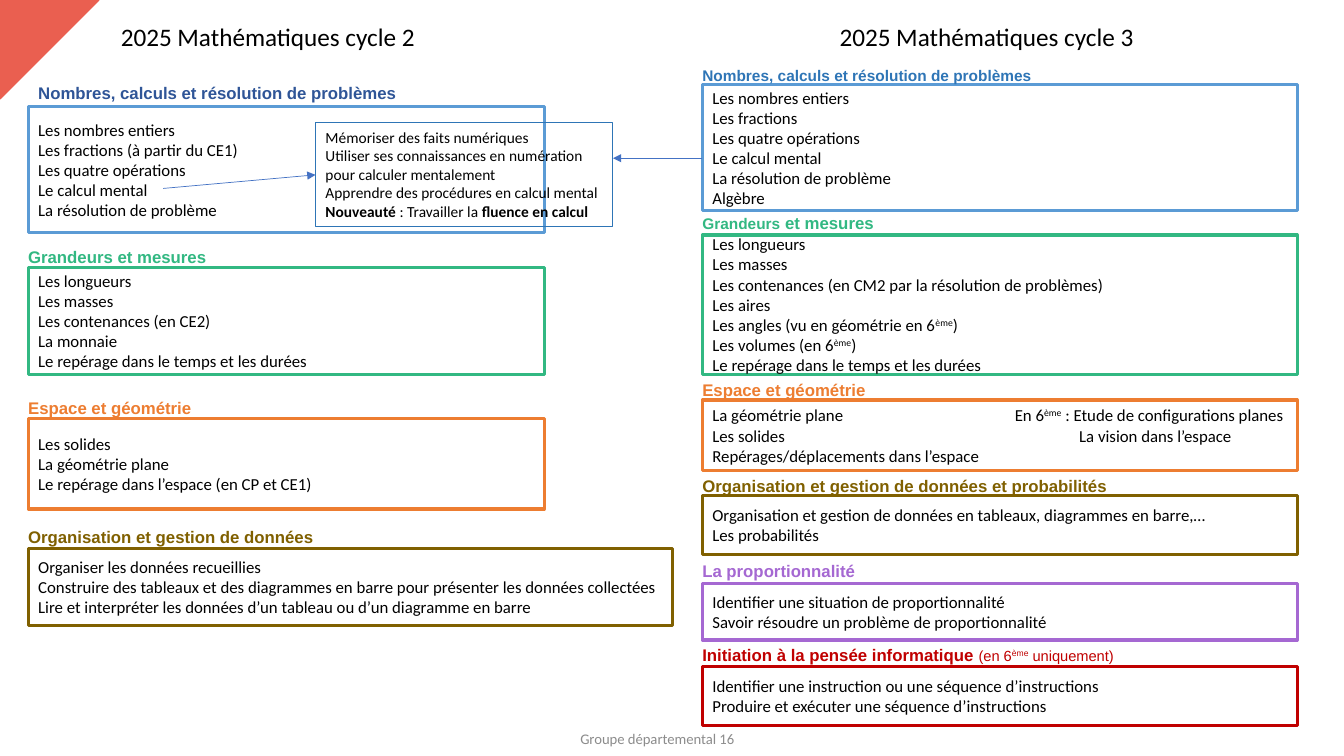
from dataclasses import dataclass

from lxml import etree
from pptx import Presentation
from pptx.dml.color import RGBColor
from pptx.enum.shapes import MSO_CONNECTOR, MSO_SHAPE
from pptx.enum.text import MSO_ANCHOR, MSO_AUTO_SIZE, PP_ALIGN
from pptx.oxml.ns import qn
from pptx.util import Pt

RECTANGLE = MSO_SHAPE.RECTANGLE
RIGHT_TRIANGLE = MSO_SHAPE.RIGHT_TRIANGLE
STRAIGHT = MSO_CONNECTOR.STRAIGHT
TOP, MIDDLE = MSO_ANCHOR.TOP, MSO_ANCHOR.MIDDLE
LEFT, CENTER = PP_ALIGN.LEFT, PP_ALIGN.CENTER
GROW, FIXED = MSO_AUTO_SIZE.SHAPE_TO_FIT_TEXT, MSO_AUTO_SIZE.NONE
LEFT_SIDE = 1

BLUE, GREEN, ORANGE = "5B9BD5", "32B882", "ED7D31"
BROWN, PURPLE, RED = "806000", "A568D2", "C00000"
DARK_BLUE, MID_BLUE, ARROW_BLUE = "2F5597", "2E75B6", "4472C4"
CORAL, GREY, BLACK = "EA5F50", "8C8C8C", "000000"

BOLD = {"bold": True}
ORDINAL = ("ème", {"raised": True})
SMALL = {"size": 10.5, "bold": False}


@dataclass
class Section:
    """A heading above a framed list; a line is a string or a list of runs."""
    heading: list
    heading_top: float
    color: str
    box_top: float
    box_height: float
    lines: list
    heading_color: str = ""
    heading_size: float = 12
    heading_shift: float = -7.2
    heading_width: float = 297.4
    box_width: float = 368.6
    tabs: tuple = ()


CYCLE_2 = [
    Section(["Nombres, calculs et résolution de problèmes"], 54.7, BLUE, 76.3, 90,
            ["Les nombres entiers", "Les fractions (à partir du CE1)",
             "Les quatre opérations", "Le calcul mental",
             "La résolution de problème"],
            heading_color=DARK_BLUE, heading_shift=0),
    Section(["Grandeurs et mesures"], 171.4, GREEN, 190.8, 77,
            ["Les longueurs", "Les masses", "Les contenances (en CE2)",
             "La monnaie", "Le repérage dans le temps et les durées"]),
    Section(["Espace et géométrie"], 279.4, ORANGE, 298.8, 64.8,
            ["Les solides", "La géométrie plane",
             "Le repérage dans l’espace (en CP et CE1)"]),
    Section(["Organisation et gestion de données"], 371.5, BROWN, 391.7, 55.4,
            ["Organiser les données recueillies",
             "Construire des tableaux et des diagrammes en barre pour présenter "
             "les données collectées",
             "Lire et interpréter les données d’un tableau ou d’un diagramme en barre"],
            box_width=460.1),
]

CYCLE_3 = [
    Section(["Nombres, calculs et résolution de problèmes"], 42.5, BLUE, 60.5, 90,
            ["Les nombres entiers", "Les fractions", "Les quatre opérations",
             "Le calcul mental", "La résolution de problème", "Algèbre"],
            heading_color=MID_BLUE, heading_size=11, box_width=424.8),
    Section([("Grandeurs", {"size": 11}), " et mesures"], 147.6, GREEN, 167.8, 99.4,
            ["Les longueurs", "Les masses",
             "Les contenances (en CM2 par la résolution de problèmes)", "Les aires",
             ["Les angles (vu en géométrie en 6", ORDINAL, ")"],
             ["Les volumes (en 6", ORDINAL, ")"],
             "Le repérage dans le temps et les durées"],
            box_width=424.8),
    Section(["Espace et géométrie"], 266.4, ORANGE, 285.8, 50.4,
            [["La géométrie plane\tEn 6", ORDINAL, " : Etude de configurations planes"],
             "Les solides\tLa vision dans l’espace",
             "Repérages/déplacements dans l’espace"],
            box_width=424.8, tabs=(216, 262)),
    Section(["Organisation et gestion de données et probabilités"],
            335.5, BROWN, 354.2, 41.8,
            ["Organisation et gestion de données en tableaux, diagrammes en barre,…",
             "Les probabilités"],
            heading_width=329, box_width=424.8),
    Section(["La proportionnalité"], 396, PURPLE, 416.9, 40.3,
            ["Identifier une situation de proportionnalité",
             "Savoir résoudre un problème de proportionnalité"],
            heading_width=329, box_width=424.8),
    Section(["Initiation à la pensée informatique ", ("(en 6", SMALL),
             ("ème", {**SMALL, "raised": True}), (" uniquement)", SMALL)],
            455.8, RED, 475.9, 42.5,
            ["Identifier une instruction ou une séquence d’instructions",
             "Produire et exécuter une séquence d’instructions"],
            heading_width=357.1, box_width=424.8),
]

CALLOUT = [
    "Mémoriser des faits numériques",
    "Utiliser ses connaissances en numération pour calculer mentalement",
    "Apprendre des procédures en calcul mental",
    [("Nouveauté", BOLD), " : Travailler la ", ("fluence en calcul", BOLD)],
]


def rgb(color):
    return RGBColor.from_string(color)


def add_run(paragraph, text, size, font, color, bold=False, raised=False):
    run = paragraph.add_run()
    run.text = text
    run.font.size = Pt(size)
    run.font.name = font
    run.font.bold = bold
    run.font.color.rgb = rgb(color)
    if raised:
        run.font._element.set("baseline", "30000")


def add_tab_stop(paragraph, position):
    tab_list = etree.SubElement(paragraph._p.get_or_add_pPr(), qn("a:tabLst"))
    etree.SubElement(tab_list, qn("a:tab"), pos=str(Pt(position)), algn="l")


def write_lines(shape, lines, size=12, font="Calibri", color=BLACK, bold=False,
                anchor=TOP, align=LEFT, fit=FIXED, tabs=()):
    """Fill a shape with paragraphs; tabs gives one stop for each leading line."""
    frame = shape.text_frame
    frame.word_wrap = True
    frame.auto_size = fit
    frame.vertical_anchor = anchor
    for index, line in enumerate(lines):
        paragraph = frame.add_paragraph() if index else frame.paragraphs[0]
        paragraph.alignment = align
        if index < len(tabs):
            add_tab_stop(paragraph, tabs[index])
        for run in [line] if isinstance(line, str) else line:
            text, changes = (run, {}) if isinstance(run, str) else run
            style = {"size": size, "font": font, "color": color, "bold": bold}
            add_run(paragraph, text, **{**style, **changes})


def add_text(slide, left, top, width, height, lines, **style):
    shape = slide.shapes.add_textbox(Pt(left), Pt(top), Pt(width), Pt(height))
    write_lines(shape, lines, **style)
    return shape


def add_outline(slide, kind, left, top, width, height, color, weight):
    shape = slide.shapes.add_shape(kind, Pt(left), Pt(top), Pt(width), Pt(height))
    shape.shadow.inherit = False
    shape.fill.background()
    shape.line.color.rgb = rgb(color)
    shape.line.width = Pt(weight)
    return shape


def add_section(slide, left, section):
    box = add_outline(slide, RECTANGLE, left, section.box_top, section.box_width,
                      section.box_height, section.color, 2.25)
    write_lines(box, section.lines, anchor=MIDDLE, tabs=section.tabs)
    heading = add_text(slide, left + section.heading_shift, section.heading_top,
                       section.heading_width, 21.6, [section.heading],
                       size=section.heading_size, font="Arial", bold=True,
                       color=section.heading_color or section.color, fit=GROW)
    paragraph = heading.text_frame.paragraphs[0]
    paragraph.line_spacing = 1.07
    paragraph.space_after = Pt(8)


def add_arrow(slide, start_x, start_y, end_x, end_y):
    arrow = slide.shapes.add_connector(STRAIGHT, Pt(start_x), Pt(start_y),
                                       Pt(end_x), Pt(end_y))
    arrow.line.color.rgb = rgb(ARROW_BLUE)
    arrow.line.width = Pt(0.5)
    etree.SubElement(arrow.line._get_or_add_ln(), qn("a:tailEnd"), type="triangle")
    etree.SubElement(arrow._element.spPr, qn("a:effectLst"))
    return arrow


def main():
    presentation = Presentation()
    presentation.slide_width, presentation.slide_height = Pt(960), Pt(540)
    slide = presentation.slides.add_slide(presentation.slide_layouts[6])

    corner = add_outline(slide, RIGHT_TRIANGLE, 0, 0, 70.6, 70.6, CORAL, 1)
    corner.rotation = 90
    corner.fill.solid()
    corner.fill.fore_color.rgb = rgb(CORAL)

    columns = [(2, 79.2, 20.2, CYCLE_2), (3, 592.6, 501.8, CYCLE_3)]
    for cycle, title_left, left, sections in columns:
        add_text(slide, title_left, 11.5, 238.3, 28.8,
                 [f"2025 Mathématiques cycle {cycle}"], size=18, fit=GROW)
        for section in sections:
            add_section(slide, left, section)

    callout = add_outline(slide, RECTANGLE, 225.4, 87.8, 212.4, 74.2, MID_BLUE, 0.75)
    write_lines(callout, CALLOUT, size=11, fit=GROW)
    mental_arrow = add_arrow(slide, 116.6, 134.6, 225.4, 124.9)
    mental_arrow.end_connect(callout, LEFT_SIDE)
    add_arrow(slide, 501.8, 113, 437.8, 113)

    add_text(slide, 95.8, 517, 747.4, 21.6, ["Groupe départemental 16"],
             size=10.5, color=GREY, anchor=MIDDLE, align=CENTER)
    presentation.save("out.pptx")


if __name__ == "__main__":
    main()
